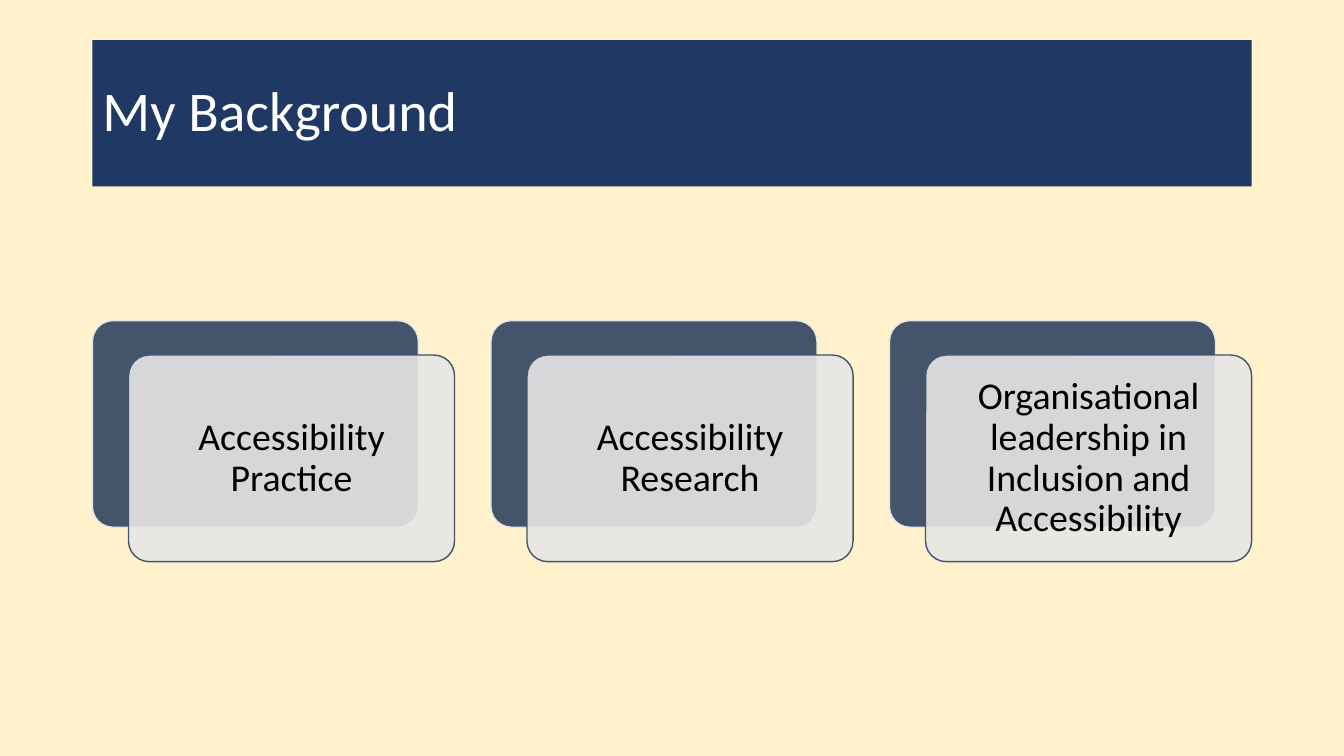
import pptx
import pptx.util
import pptx.dml.color
import pptx.enum.shapes
import pptx.enum.text
import pptx.oxml.ns
import lxml.etree

Pt = pptx.util.Pt
COLORS = {
    "cream": "FFF2CC",
    "navy": "203864",
    "slate": "44546A",
    "grey": "E7E6E6",
    "white": "FFFFFF",
    "black": "000000",
}
FONT = "Calibri"
TOPICS = [
    "Accessibility Practice",
    "Accessibility Research",
    "Organisational leadership in Inclusion and Accessibility",
]


def rgb(name):
    return pptx.dml.color.RGBColor.from_string(COLORS[name])


def paint(fill, color):
    fill.solid()
    fill.fore_color.rgb = rgb(color)


def write(shape, text, size, color, alignment):
    frame = shape.text_frame
    frame.word_wrap = True
    frame.auto_size = pptx.enum.text.MSO_AUTO_SIZE.NONE
    frame.vertical_anchor = pptx.enum.text.MSO_ANCHOR.MIDDLE
    paragraph = frame.paragraphs[0]
    paragraph.alignment = alignment
    paragraph.line_spacing = 0.9
    run = paragraph.add_run()
    run.text = text
    run.font.name = FONT
    run.font.size = Pt(size)
    run.font.color.rgb = rgb(color)


def add_title(slide, text, left, top, width, height):
    title = slide.shapes.title
    title.left, title.top = Pt(left), Pt(top)
    title.width, title.height = Pt(width), Pt(height)
    paint(title.fill, "navy")
    write(title, text, 40, "white", pptx.enum.text.PP_ALIGN.LEFT)


def add_panel(group, left, top, width, height, fill, line):
    panel = group.shapes.add_shape(
        pptx.enum.shapes.MSO_SHAPE.ROUNDED_RECTANGLE,
        Pt(left), Pt(top), Pt(width), Pt(height))
    panel.adjustments[0] = 0.1
    panel.shadow.inherit = False
    paint(panel.fill, fill)
    panel.line.color.rgb = rgb(line)
    panel.line.width = Pt(1)
    return panel


def add_card(group, text, left, top, width, height):
    offset_x, offset_y = 25.8, 24.6
    size = (width - offset_x, height - offset_y)
    add_panel(group, left, top, *size, "slate", "grey")
    front = add_panel(group, left + offset_x, top + offset_y, *size, "grey", "slate")
    color = front.fill._xPr.find(".//" + pptx.oxml.ns.qn("a:srgbClr"))
    lxml.etree.SubElement(color, pptx.oxml.ns.qn("a:alpha"), val="90000")
    frame = front.text_frame
    frame.margin_left = frame.margin_right = Pt(8)
    frame.margin_top = frame.margin_bottom = Pt(8)
    write(front, text, 27, "black", pptx.enum.text.PP_ALIGN.CENTER)


def add_cards(slide, topics, left, top, width, height):
    gap = 26
    card_width = (width - gap * (len(topics) - 1)) / len(topics)
    group = slide.shapes.add_group_shape()
    for index, topic in enumerate(topics):
        add_card(group, topic, left + index * (card_width + gap), top, card_width, height)


def main():
    presentation = pptx.Presentation()
    presentation.slide_width, presentation.slide_height = Pt(960), Pt(540)
    slide = presentation.slides.add_slide(presentation.slide_layouts[5])
    paint(slide.background.fill, "cream")
    add_title(slide, "My Background", 66, 28.75, 828, 104.4)
    add_cards(slide, TOPICS, 66, 229, 828, 172.2)
    presentation.save("out.pptx")


if __name__ == "__main__":
    main()
